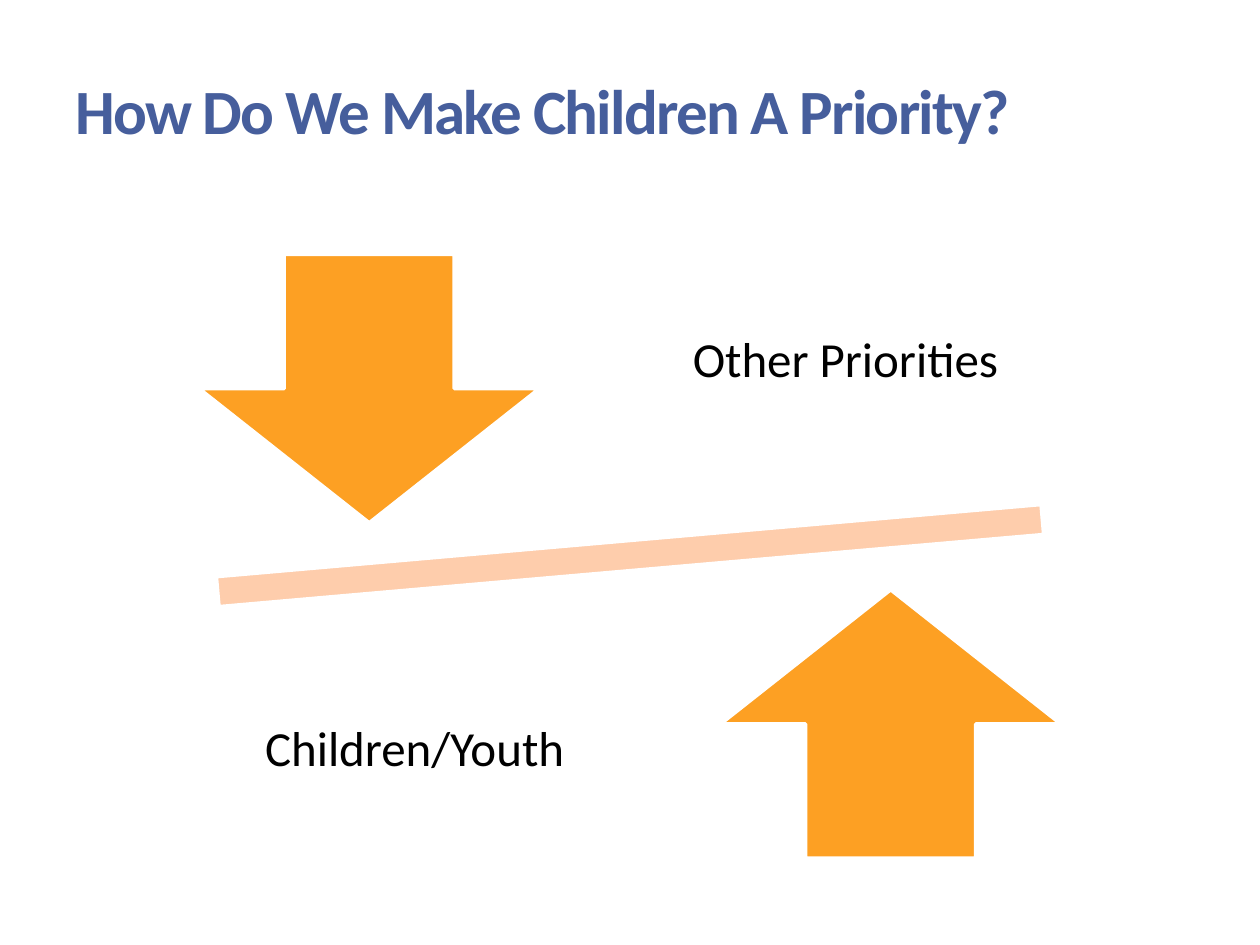
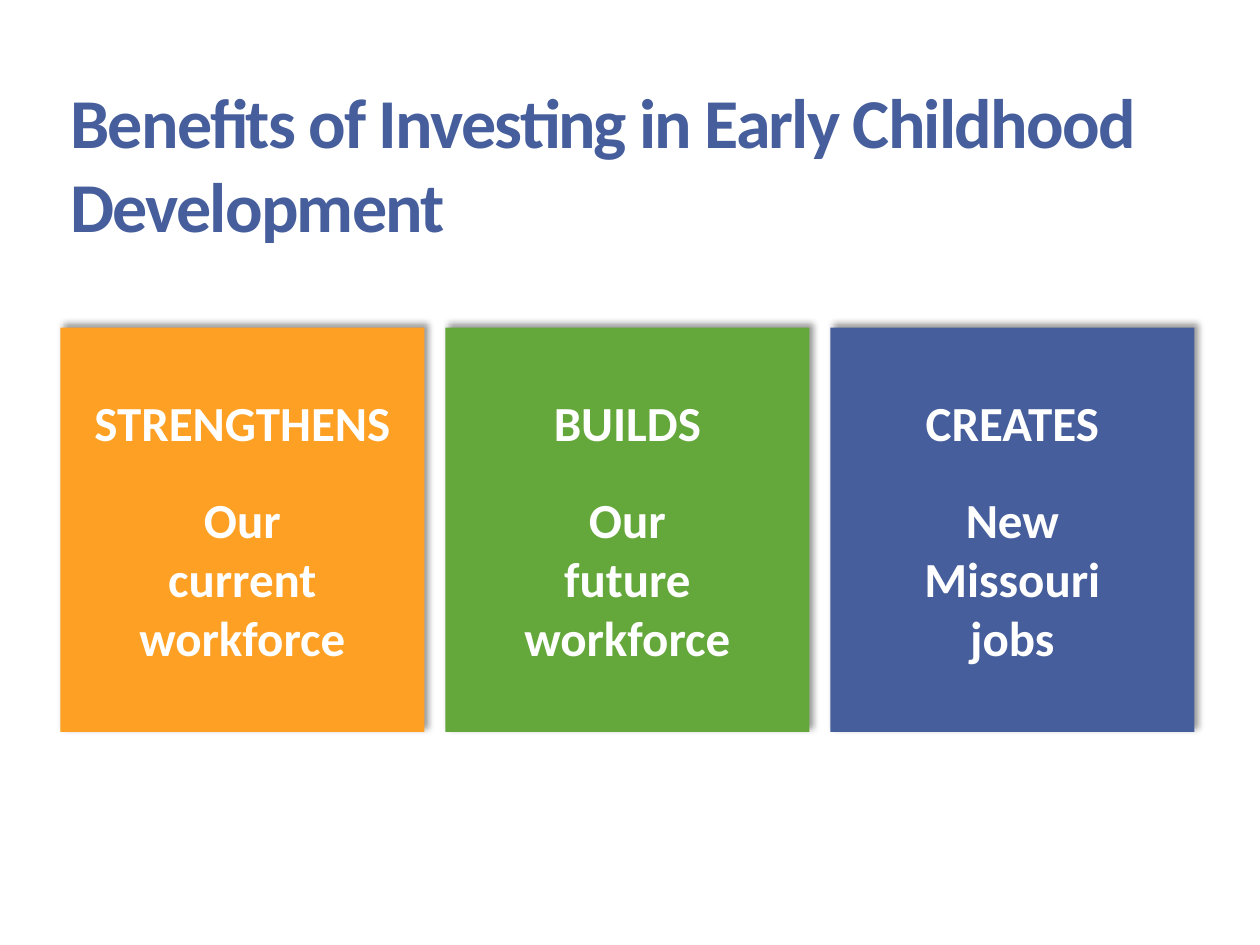
from dataclasses import dataclass

from lxml.etree import SubElement
from pptx import Presentation
from pptx.dml.color import RGBColor
from pptx.enum.shapes import MSO_SHAPE
from pptx.enum.text import MSO_ANCHOR, PP_ALIGN
from pptx.oxml.ns import qn
from pptx.shapes.autoshape import Shape
from pptx.slide import Slide
from pptx.util import Pt

HUES = {
    "orange": "FDA023",
    "green": "64A73B",
    "blue": "465E9C",
    "peach": "FECDAC",
    "white": "FFFFFF",
    "black": "000000",
}
FONT = "Calibri"


@dataclass(frozen=True)
class Box:
    left: float
    top: float
    width: float
    height: float

    def place(self) -> tuple[Pt, Pt, Pt, Pt]:
        return Pt(self.left), Pt(self.top), Pt(self.width), Pt(self.height)


@dataclass(frozen=True)
class Arrow:
    kind: MSO_SHAPE
    left: float
    top: float


@dataclass(frozen=True)
class Label:
    text: str
    left: float
    top: float


@dataclass(frozen=True)
class Card:
    hue: str
    lines: tuple[str, ...]


ARROWS = (
    Arrow(MSO_SHAPE.DOWN_ARROW, 113.8, 145.4),
    Arrow(MSO_SHAPE.UP_ARROW, 411.8, 337),
)
LABELS = (
    Label("Other Priorities", 379.4, 126),
    Label("Children/Youth", 133.2, 348.5),
)
CARDS = (
    Card("orange", ("STRENGTHENS", "Our", "current", "workforce")),
    Card("green", ("BUILDS", "Our", "future", "workforce")),
    Card("blue", ("CREATES", "New", "Missouri", "jobs")),
)


def color(hue: str) -> RGBColor:
    return RGBColor.from_string(HUES[hue])


def add_text(slide: Slide, box: Box, text: str, size: float, hue: str,
             bold: bool = False, align: PP_ALIGN = PP_ALIGN.CENTER) -> Shape:
    shape = slide.shapes.add_textbox(*box.place())
    frame = shape.text_frame
    frame.text = text
    frame.word_wrap = True
    for para in frame.paragraphs:
        para.alignment = align
        for run in para.runs:
            run.font.name = FONT
            run.font.size = Pt(size)
            run.font.bold = bold
            run.font.color.rgb = color(hue)
    return shape


def add_title(slide: Slide, box: Box, text: str, size: float, base: float) -> None:
    shape = add_text(slide, box, text, size, "blue", True, PP_ALIGN.LEFT)
    frame = shape.text_frame
    frame.vertical_anchor = MSO_ANCHOR.BOTTOM
    frame.margin_bottom = Pt(base)
    for run in frame.paragraphs[0].runs:
        run.font._element.set("spc", "-100")


def add_form(slide: Slide, kind: MSO_SHAPE, box: Box, hue: str,
             edge: float = 0) -> Shape:
    shape = slide.shapes.add_shape(kind, *box.place())
    shape.shadow.inherit = False
    shape.fill.solid()
    shape.fill.fore_color.rgb = color(hue)
    if edge:
        shape.line.color.rgb = color("white")
        shape.line.width = Pt(edge)
    else:
        shape.line.fill.background()
    return shape


def add_shade(shape: Shape) -> None:
    effects = shape._element.spPr.find(qn("a:effectLst"))
    shade = SubElement(effects, qn("a:outerShdw"), blurRad=str(Pt(4)),
                       dist=str(Pt(3)), dir=str(315 * 60000), rotWithShape="0")
    tint = SubElement(shade, qn("a:srgbClr"), val=HUES["black"])
    SubElement(tint, qn("a:alpha"), val="40000")


def add_label(slide: Slide, label: Label) -> None:
    box = Box(label.left, label.top, 207.4, 161.3)
    frame = add_text(slide, box, label.text, 28, "black").text_frame
    frame.vertical_anchor = MSO_ANCHOR.MIDDLE
    frame.margin_left = frame.margin_right = Pt(15)
    frame.paragraphs[0].line_spacing = 0.9


def add_card(slide: Slide, card: Card, left: float) -> None:
    panel = Box(left, 187.2, 208, 231)
    add_shade(add_form(slide, MSO_SHAPE.RECTANGLE, panel, card.hue))
    box = Box(left, 220.5, 208, 165)
    shape = add_text(slide, box, "\n".join(card.lines), 28, "white", True)
    shape.text_frame.paragraphs[1].space_before = Pt(22)


def draw_scale(slide: Slide) -> None:
    add_title(slide, Box(36, 41.8, 648, 77.8),
              "How Do We Make Children A Priority?", 36, 35.6)
    beam = add_form(slide, MSO_SHAPE.MATH_MINUS, Box(38.2, 280.8, 643.7, 73.4),
                    "peach", 2.08)
    beam.rotation = 355
    for arrow in ARROWS:
        box = Box(arrow.left, arrow.top, 194.4, 153.4)
        add_form(slide, arrow.kind, box, "orange", 2.08)
    for label in LABELS:
        add_label(slide, label)


def draw_cards(slide: Slide) -> None:
    add_title(slide, Box(33.1, 74.2, 648, 77.8),
              "Benefits of Investing in Early Childhood Development", 40, 11.3)
    for index, card in enumerate(CARDS):
        add_card(slide, card, 34.5 + 220 * index)


def main() -> None:
    deck = Presentation()
    deck.slide_width, deck.slide_height = Pt(720), Pt(540)
    for draw in (draw_scale, draw_cards):
        draw(deck.slides.add_slide(deck.slide_layouts[6]))
    deck.save("out.pptx")


if __name__ == "__main__":
    main()
